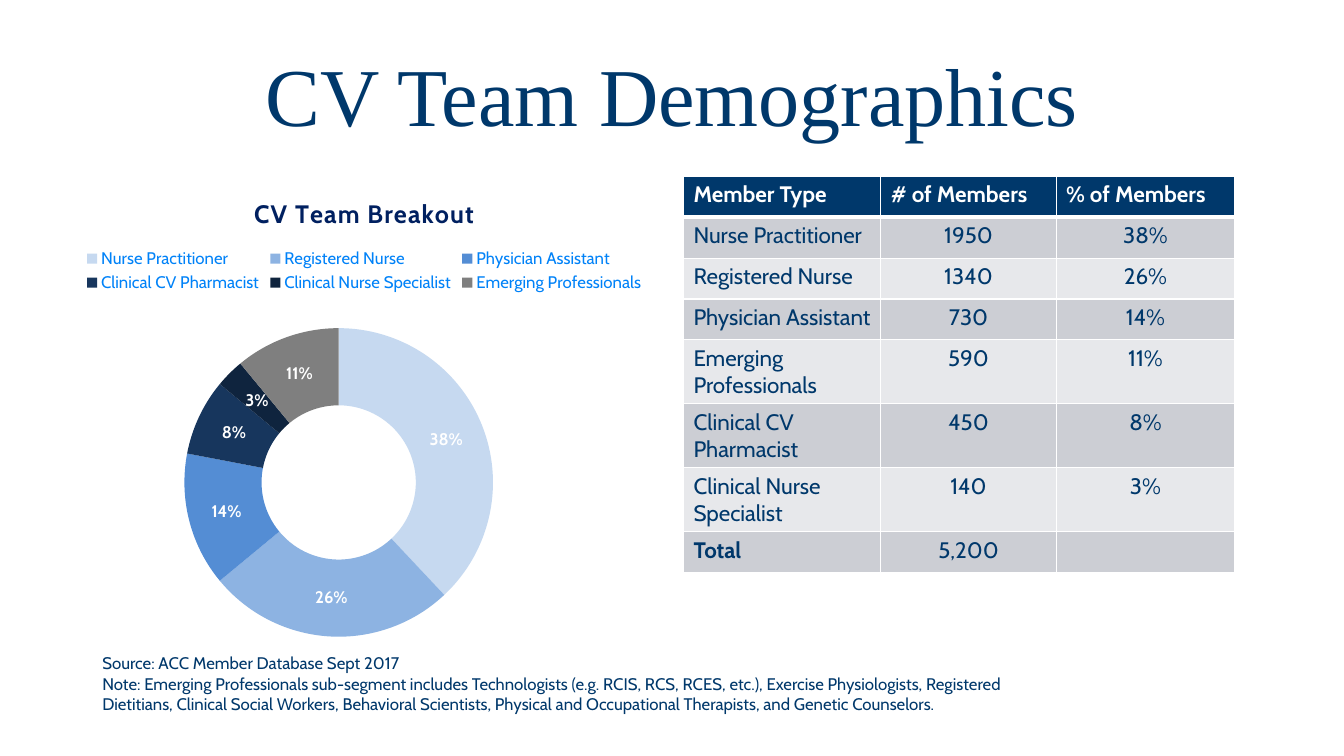
from lxml import etree
from pptx import Presentation
from pptx.chart.data import CategoryChartData
from pptx.dml.color import RGBColor
from pptx.enum import chart as charts, text
from pptx.oxml import parse_xml
from pptx.oxml.ns import nsdecls, qn
from pptx.util import Pt

NAVY = RGBColor(0x00, 0x38, 0x6B)
TITLE_NAVY = RGBColor(0x00, 0x20, 0x60)
LEGEND_BLUE = RGBColor(0x00, 0x82, 0xF8)
WHITE = RGBColor(0xFF, 0xFF, 0xFF)
BANDS = [RGBColor(0xCC, 0xCE, 0xD4), RGBColor(0xE7, 0xE8, 0xEB)]
BODY_FONT = "Cabin"

TITLE = "CV Team Demographics"
CHART_TITLE = "CV Team Breakout"
SLICES = [
    ("Nurse Practitioner", 38, RGBColor(0xC6, 0xD9, 0xF0)),
    ("Registered Nurse", 26, RGBColor(0x8D, 0xB3, 0xE2)),
    ("Physician Assistant", 14, RGBColor(0x54, 0x8D, 0xD4)),
    ("Clinical CV Pharmacist", 8, RGBColor(0x17, 0x36, 0x5D)),
    ("Clinical Nurse Specialist", 3, RGBColor(0x0F, 0x24, 0x3E)),
    ("Emerging Professionals", 11, RGBColor(0x7F, 0x7F, 0x7F)),
]
PLOT_LAYOUT = {"x": 0.197, "y": 0.304, "w": 0.52, "h": 0.619}
MEMBERS = [
    ("Member Type", "# of Members", "% of Members"),
    ("Nurse Practitioner", "1950", "38%"),
    ("Registered Nurse", "1340", "26%"),
    ("Physician Assistant", "730", "14%"),
    ("Emerging Professionals", "590", "11%"),
    ("Clinical CV Pharmacist", "450", "8%"),
    ("Clinical Nurse Specialist", "140", "3%"),
    ("Total", "5,200", ""),
]
COLUMN_WIDTHS = [141, 125.2, 127.6]
ROW_HEIGHT = 29.2
NOTES = [
    "Source: ACC Member Database Sept 2017",
    "Note: Emerging Professionals sub-segment includes Technologists (e.g. RCIS, RCS, RCES, etc.), "
    "Exercise Physiologists, Registered Dietitians, Clinical Social Workers, Behavioral Scientists, "
    "Physical and Occupational Therapists, and Genetic Counselors.",
]


def style(font, size, color, bold=False, name=BODY_FONT):
    font.size, font.bold, font.name = Pt(size), bold, name
    font.color.rgb = color


def add_text(page, bounds, lines, size, name=BODY_FONT, align=None, anchor=None):
    frame = page.shapes.add_textbox(*map(Pt, bounds)).text_frame
    frame.word_wrap = True
    frame.vertical_anchor = anchor
    frame.text = "\n".join(lines)
    for para in frame.paragraphs:
        para.alignment = align
        style(para.font, size, NAVY, name=name)


def add_breakout(page):
    data = CategoryChartData()
    data.categories = [name for name, _, _ in SLICES]
    data.add_series(CHART_TITLE, [share for _, share, _ in SLICES])
    bounds = map(Pt, (48.2, 126, 424, 356.4))
    chart = page.shapes.add_chart(charts.XL_CHART_TYPE.DOUGHNUT, *bounds, data).chart
    style(chart.font, 10, NAVY)

    chart.has_title = True
    chart.chart_title.include_in_layout = False
    para = chart.chart_title.text_frame.paragraphs[0]
    span = para.add_run()
    span.text = CHART_TITLE
    style(span.font, 18, TITLE_NAVY, bold=True)
    span.font._element.set("spc", "80")

    chart.has_legend = True
    chart.legend.position = charts.XL_LEGEND_POSITION.TOP
    chart.legend.include_in_layout = False
    style(chart.legend.font, 12, LEGEND_BLUE)

    plot = chart.plots[0]
    plot.vary_by_categories = True
    for index, (_, _, color) in enumerate(SLICES):
        fill = plot.series[0].points[index].format.fill
        fill.solid()
        fill.fore_color.rgb = color
    labels = plot.series[0].data_labels
    labels.show_percentage, labels.show_value = True, False
    labels.number_format, labels.number_format_is_linked = "0%", False
    style(labels.font, 12, WHITE, bold=True)
    place_plot(chart)


def place_plot(chart):
    """Fix the inner plot area as fractions of the chart."""
    area = chart._chartSpace.find(".//" + qn("c:plotArea"))
    for layout in area.findall(qn("c:layout")):
        area.remove(layout)
    layout = etree.Element(qn("c:layout"))
    manual = etree.SubElement(layout, qn("c:manualLayout"))
    settings = {"layoutTarget": "inner", "xMode": "edge", "yMode": "edge", **PLOT_LAYOUT}
    for tag, value in settings.items():
        etree.SubElement(manual, qn("c:" + tag)).set("val", str(value))
    area.insert(0, layout)


def set_borders(cell, header):
    for side in "LRTB":
        width = 3 if header and side == "B" else 1
        cell._tc.get_or_add_tcPr().append(parse_xml(
            f'<a:ln{side} {nsdecls("a")} w="{Pt(width)}"><a:solidFill>'
            f'<a:srgbClr val="{WHITE}"/></a:solidFill></a:ln{side}>'))


def add_members(page):
    bounds = map(Pt, (488.2, 126, sum(COLUMN_WIDTHS), ROW_HEIGHT * len(MEMBERS)))
    table = page.shapes.add_table(len(MEMBERS), len(COLUMN_WIDTHS), *bounds).table
    for column, width in zip(table.columns, COLUMN_WIDTHS):
        column.width = Pt(width)
    for r, row in enumerate(MEMBERS):
        table.rows[r].height = Pt(ROW_HEIGHT)
        header = r == 0
        for c, value in enumerate(row):
            cell = table.cell(r, c)
            set_borders(cell, header)
            cell.fill.solid()
            cell.fill.fore_color.rgb = NAVY if header else BANDS[(r - 1) % 2]
            cell.text = value
            para = cell.text_frame.paragraphs[0]
            if c and not header:
                para.alignment = text.PP_ALIGN.CENTER
            style(para.font, 16, WHITE if header else NAVY, header or value == "Total")


def main():
    deck = Presentation()
    deck.slide_width, deck.slide_height = Pt(960), Pt(540)
    page = deck.slides.add_slide(deck.slide_layouts[6])
    add_text(page, (48, 21.6, 864, 90), [TITLE], 58.7, "Times New Roman",
             text.PP_ALIGN.CENTER, text.MSO_ANCHOR.MIDDLE)
    add_breakout(page)
    add_members(page)
    add_text(page, (66, 463, 665.3, 65.5), NOTES, 12)
    deck.save("out.pptx")


if __name__ == "__main__":
    main()
